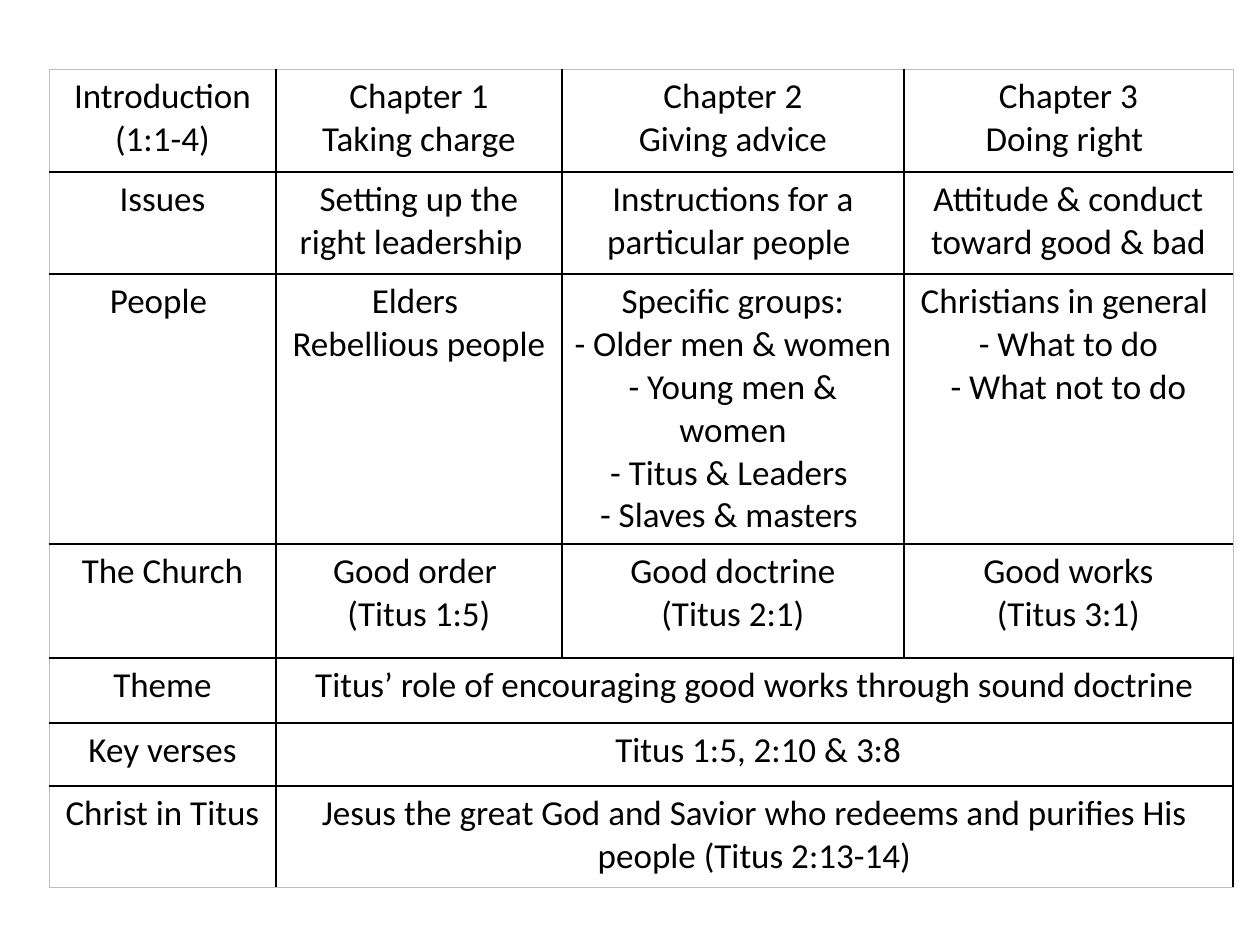
from lxml.etree import SubElement
from pptx import Presentation
from pptx.dml.color import RGBColor
from pptx.enum.text import PP_ALIGN
from pptx.oxml.ns import qn
from pptx.util import Emu, Pt

PX = 914400 // 126
COLORS = {"text": "000000", "inner": "000000", "outer": "BFBFBF"}
COLS = [227, 286, 342, 329]
ROWS = [103, 102, 270, 114, 65, 63, 102]

# One list per row, one line per paragraph; a two-cell row spans its second cell
OUTLINE = [
    ["Introduction\n(1:1-4)", "Chapter 1\nTaking charge",
     "Chapter 2\nGiving advice", "Chapter 3\nDoing right "],
    ["Issues", "Setting up the right leadership  ",
     "Instructions for a particular people ",
     "Attitude & conduct toward good & bad"],
    ["People ", "Elders \nRebellious people",
     "Specific groups:\n- Older men & women\n- Young men & women\n"
     "- Titus & Leaders \n- Slaves & masters ",
     "Christians in general \n- What to do\n- What not to do"],
    ["The Church", "Good order \n(Titus 1:5)",
     "Good doctrine\n(Titus 2:1)", "Good works\n(Titus 3:1)"],
    ["Theme", "Titus’ role of encouraging good works through sound doctrine"],
    ["Key verses", " Titus 1:5, 2:10 & 3:8"],
    ["Christ in Titus", "Jesus the great God and Savior who redeems and "
                        "purifies His people (Titus 2:13-14)"],
]


def px(n):
    return Emu(n * PX)


def set_borders(cell, row, col):
    tcPr = cell._tc.get_or_add_tcPr()
    on_edge = {"lnL": col == 0, "lnR": col == len(COLS) - 1,
               "lnT": row == 0, "lnB": row == len(ROWS) - 1}
    for i, (tag, outer) in enumerate(on_edge.items()):
        width = Pt(0.5) if outer else Pt(1)
        ln = SubElement(tcPr, qn(f"a:{tag}"), w=str(int(width)))
        fill = SubElement(ln, qn("a:solidFill"))
        SubElement(fill, qn("a:srgbClr"),
                   val=COLORS["outer" if outer else "inner"])
        tcPr.insert(i, ln)  # borders come before the cell fill


def write_cell(cell, text):
    tf = cell.text_frame
    tf.text = text
    for p in tf.paragraphs:
        p.alignment = PP_ALIGN.CENTER
        p.font.name = "Calibri"
        p.font.size = Pt(20)
        p.font.color.rgb = RGBColor.from_string(COLORS["text"])


def add_outline_table(s, left, top):
    frame = s.shapes.add_table(len(ROWS), len(COLS), px(left), px(top),
                               px(sum(COLS)), px(sum(ROWS)))
    table = frame.table
    table.first_row = table.horz_banding = False
    for column, width in zip(table.columns, COLS):
        column.width = px(width)
    for row, height in zip(table.rows, ROWS):
        row.height = px(height)

    for r, texts in enumerate(OUTLINE):
        for c in range(len(COLS)):
            cell = table.cell(r, c)
            cell.fill.background()
            set_borders(cell, r, c)
        for c, text in enumerate(texts):
            write_cell(table.cell(r, c), text)
        if len(texts) == 2:
            table.cell(r, 1).merge(table.cell(r, len(COLS) - 1))


def main():
    prs = Presentation()
    prs.slide_width, prs.slide_height = px(1260), px(945)
    s = prs.slides.add_slide(prs.slide_layouts[6])
    add_outline_table(s, 49, 69)
    prs.save("out.pptx")


if __name__ == "__main__":
    main()
